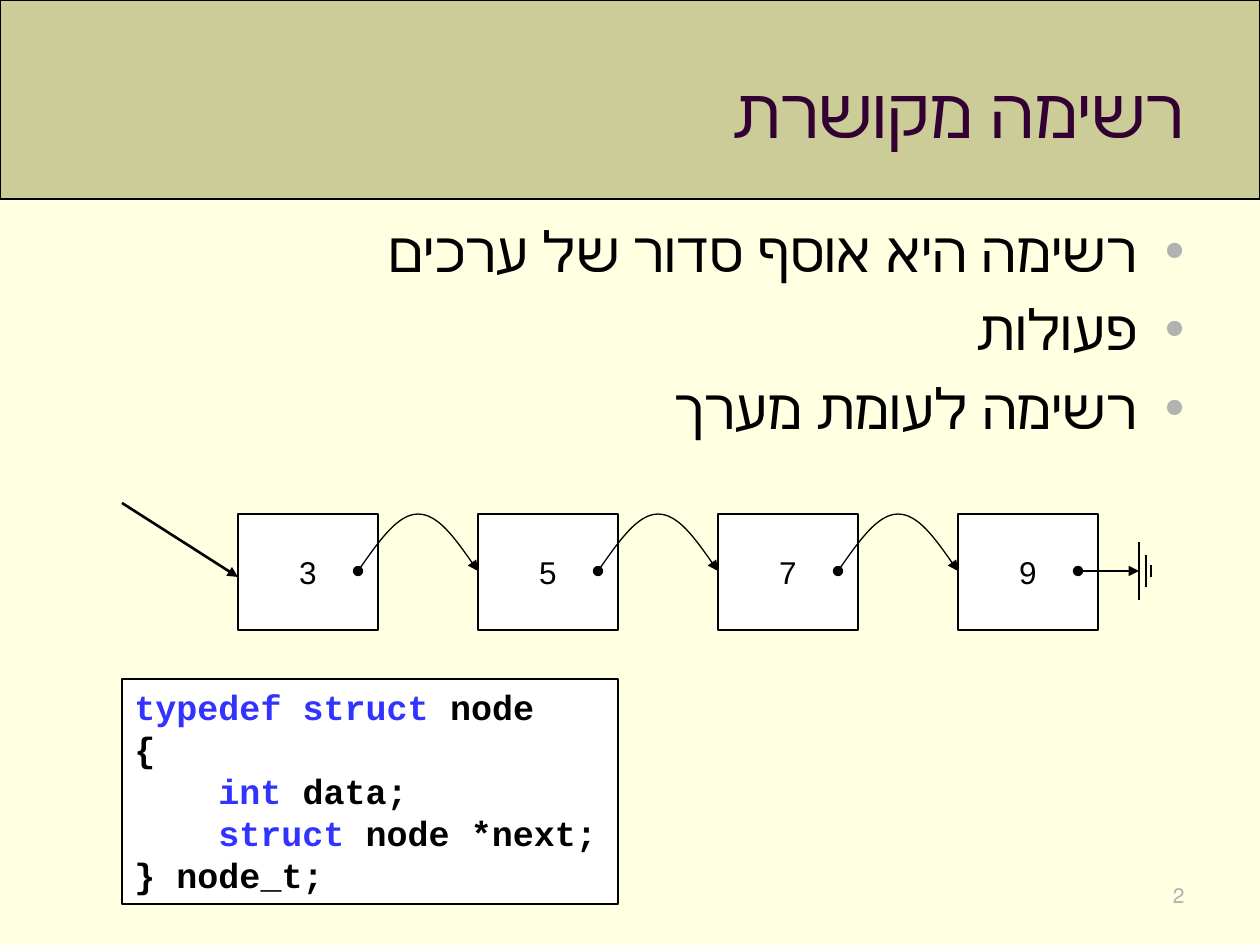
"""Build a slide that introduces linked lists in Hebrew."""
import dataclasses

import pptx
import pptx.dml.color
import pptx.enum.shapes
import pptx.enum.text
import pptx.oxml.ns
import pptx.oxml.xmlchemy
import pptx.util

EMU_PER_PX = 914400 / 126
ALIGN = pptx.enum.text.PP_ALIGN
ANCHOR = pptx.enum.text.MSO_ANCHOR
qn = pptx.oxml.ns.qn


@dataclasses.dataclass(frozen=True)
class Theme:
    background: str = "FFFFE1"
    banner: str = "CCCC99"
    title: str = "330033"
    ink: str = "000000"
    paper: str = "FFFFFF"
    muted: str = "B2B2B2"
    keyword: str = "3333FF"
    serif: str = "Times New Roman"
    sans: str = "Arial"
    mono: str = "Courier New"
    title_size: int = 40
    body_size: int = 32
    code_size: int = 20
    code_leading: int = 24
    value_size: int = 18
    number_size: int = 12
    thin: float = 0.75
    thick: float = 1.5


def px(value):
    return pptx.util.Emu(round(value * EMU_PER_PX))


def rgb(value):
    return pptx.dml.color.RGBColor.from_string(value)


def add_xml(parent, tag, **attributes):
    element = pptx.oxml.xmlchemy.OxmlElement(tag)
    for name, value in attributes.items():
        element.set(name, value)
    parent.append(element)
    return element


class SlideBuilder:
    def __init__(self, slide, theme):
        self.slide = slide
        self.theme = theme
        slide.background.fill.solid()
        slide.background.fill.fore_color.rgb = rgb(theme.background)

    def place(self, shape, left, top, width, height):
        box = {"left": left, "top": top, "width": width, "height": height}
        for name, value in box.items():
            setattr(shape, name, px(value))

    def run(self, paragraph, text, font, size, color, bold=False):
        run = paragraph.add_run()
        run.text = text
        style = {"name": font, "size": pptx.util.Pt(size), "bold": bold}
        for name, value in style.items():
            setattr(run.font, name, value)
        run.font.color.rgb = rgb(color)

    def right_to_left(self, paragraph):
        paragraph.alignment = ALIGN.RIGHT
        properties = paragraph._p.get_or_add_pPr()
        properties.set("rtl", "1")
        return properties

    def title(self, text, *box):
        shape = self.slide.shapes.title
        self.place(shape, *box)
        shape.text_frame.vertical_anchor = ANCHOR.MIDDLE
        paragraph = shape.text_frame.paragraphs[0]
        self.right_to_left(paragraph)
        self.run(paragraph, text, self.theme.serif, self.theme.title_size, self.theme.title)

    def bullets(self, items, *box):
        shape = self.slide.placeholders[1]
        self.place(shape, *box)
        frame = shape.text_frame
        for index, item in enumerate(items):
            paragraph = frame.add_paragraph() if index else frame.paragraphs[0]
            properties = self.right_to_left(paragraph)
            properties.set("marL", str(px(47)))
            properties.set("indent", str(px(-47)))
            spacing = add_xml(properties, "a:spcBef")
            add_xml(spacing, "a:spcPct", val="20000")
            color = add_xml(properties, "a:buClr")
            add_xml(color, "a:srgbClr", val=self.theme.muted)
            add_xml(properties, "a:buChar", char="•")
            self.run(paragraph, item, self.theme.sans, self.theme.body_size, self.theme.ink)

    def number(self, text, *box):
        shape = self.slide.shapes.add_textbox(*map(px, box))
        shape.text_frame.word_wrap = True
        paragraph = shape.text_frame.paragraphs[0]
        self.right_to_left(paragraph)
        self.run(paragraph, text, self.theme.sans, self.theme.number_size, self.theme.muted)

    def rectangle(self, fill, *box):
        kind = pptx.enum.shapes.MSO_SHAPE.RECTANGLE
        shape = self.slide.shapes.add_shape(kind, *map(px, box))
        shape.shadow.inherit = False
        shape.fill.solid()
        shape.fill.fore_color.rgb = rgb(fill)
        self.outline(shape.line)
        return shape

    def banner(self, *box):
        shape = self.rectangle(self.theme.banner, *box)
        self.slide.shapes._spTree.insert(2, shape._element)

    def node(self, text, *box):
        shape = self.rectangle(self.theme.paper, *box)
        shape.text_frame.vertical_anchor = ANCHOR.MIDDLE
        paragraph = shape.text_frame.paragraphs[0]
        paragraph.alignment = ALIGN.CENTER
        self.run(paragraph, text, self.theme.sans, self.theme.value_size, self.theme.ink)

    def code(self, lines, *box):
        frame = self.rectangle(self.theme.paper, *box).text_frame
        frame.vertical_anchor = ANCHOR.TOP
        for index, (indent, keyword, rest) in enumerate(lines):
            paragraph = frame.add_paragraph() if index else frame.paragraphs[0]
            paragraph.alignment = ALIGN.LEFT
            paragraph.line_spacing = pptx.util.Pt(self.theme.code_leading)
            paragraph._p.get_or_add_pPr().set("marL", str(px(indent)))
            for text, color in ((keyword, self.theme.keyword), (rest, self.theme.ink)):
                if text:
                    self.run(paragraph, text, self.theme.mono, self.theme.code_size, color, True)

    def outline(self, line, width=None, head=None, tail=None):
        line.color.rgb = rgb(self.theme.ink)
        line.width = pptx.util.Pt(width or self.theme.thin)
        for tag, kind in (("a:headEnd", head), ("a:tailEnd", tail)):
            if kind:
                add_xml(line._get_or_add_ln(), tag, type=kind)

    def line(self, start, end, **style):
        kind = pptx.enum.shapes.MSO_CONNECTOR.STRAIGHT
        connector = self.slide.shapes.add_connector(kind, *map(px, start + end))
        self.outline(connector.line, **style)
        add_xml(connector._element.spPr, "a:effectLst")

    def arc(self, left, top, width, height):
        steps = ((1, 1), (2, 0), (3, 0), (4, 0), (5, 1), (6, 2))
        points = [(px(left + width * x / 6), px(top + height * y / 2)) for x, y in steps]
        builder = self.slide.shapes.build_freeform(px(left), px(top + height))
        shape = builder.add_line_segments(points, close=False).convert_to_shape()
        outline = next(shape._element.iter(qn("a:path")))
        segments = outline.findall(qn("a:lnTo"))
        for first in range(0, len(segments), 3):
            curve = add_xml(outline, "a:cubicBezTo")
            for segment in segments[first:first + 3]:
                curve.append(segment[0])
                outline.remove(segment)
        shape.shadow.inherit = False
        shape.fill.background()
        self.outline(shape.line, head="oval", tail="triangle")


def draw_list(builder, values):
    left, top, width, height, pitch = 238, 514, 140, 116, 240
    middle, link = 571, 120
    for index, value in enumerate(values):
        builder.node(value, left + index * pitch, top, width, height)
    for index in range(len(values) - 1):
        builder.arc(left + index * pitch + link, top, pitch - link, middle - top)
    ground = 1139
    start = left + (len(values) - 1) * pitch + link
    builder.line((start, middle), (ground, middle), head="oval", tail="triangle")
    for offset, half in ((0, 29), (7, 16), (12, 6)):
        x = ground + offset
        builder.line((x, middle - half), (x, middle + half))
    builder.line((122, 503), (left, 577), width=builder.theme.thick, tail="triangle")


def main():
    presentation = pptx.Presentation()
    presentation.slide_width, presentation.slide_height = px(1260), px(945)
    slide = presentation.slides.add_slide(presentation.slide_layouts[1])
    builder = SlideBuilder(slide, Theme())
    builder.banner(0, 0, 1260, 199)
    builder.title("רשימה מקושרת", 63, 32, 1134, 157)
    items = ("רשימה היא אוסף סדור של ערכים", "פעולות", "רשימה לעומת מערך")
    builder.bullets(items, 63, 210, 1134, 672)
    builder.number("2", 903, 876, 294, 50)
    draw_list(builder, ("3", "5", "7", "9"))
    code = ((0, "typedef struct ", "node"), (0, "", "{"), (84, "int ", "data;"),
            (84, "struct ", "node *next;"), (0, "", "} node_t;"))
    builder.code(code, 122, 679, 496, 225)
    presentation.save("out.pptx")


if __name__ == "__main__":
    main()
